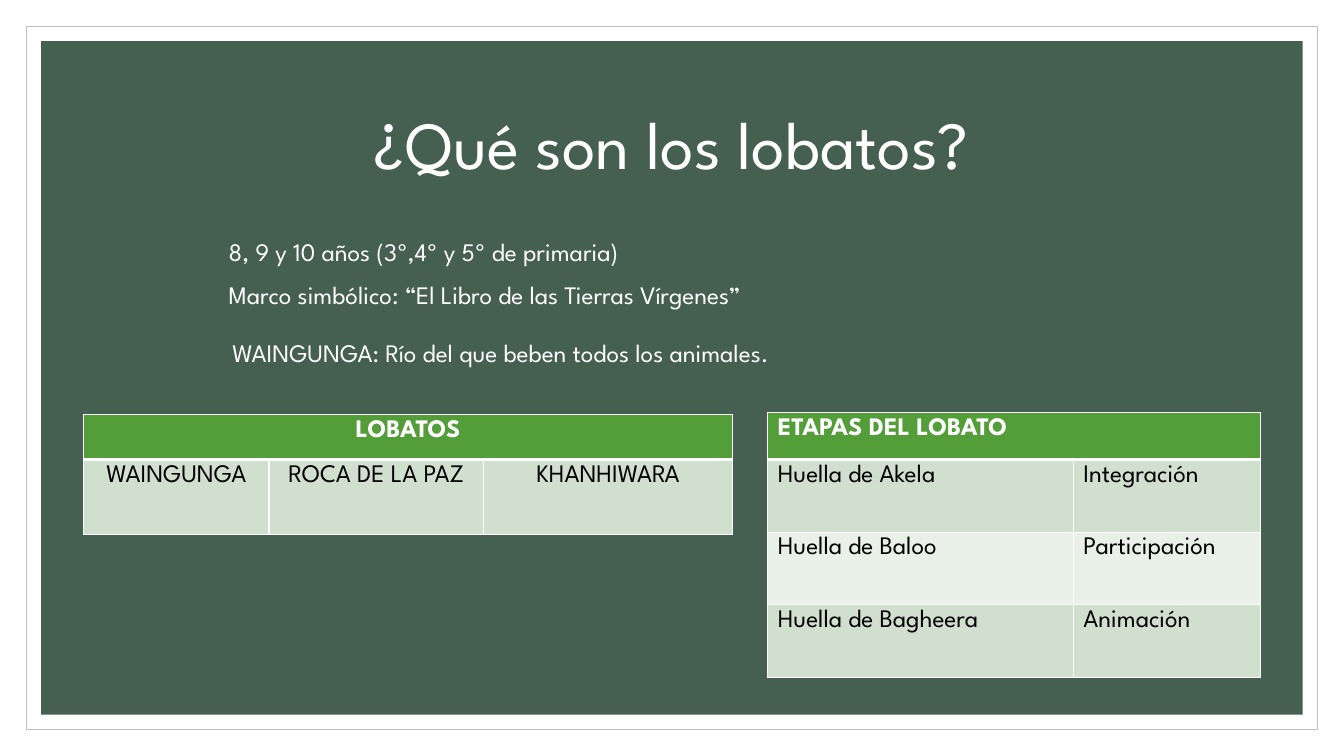
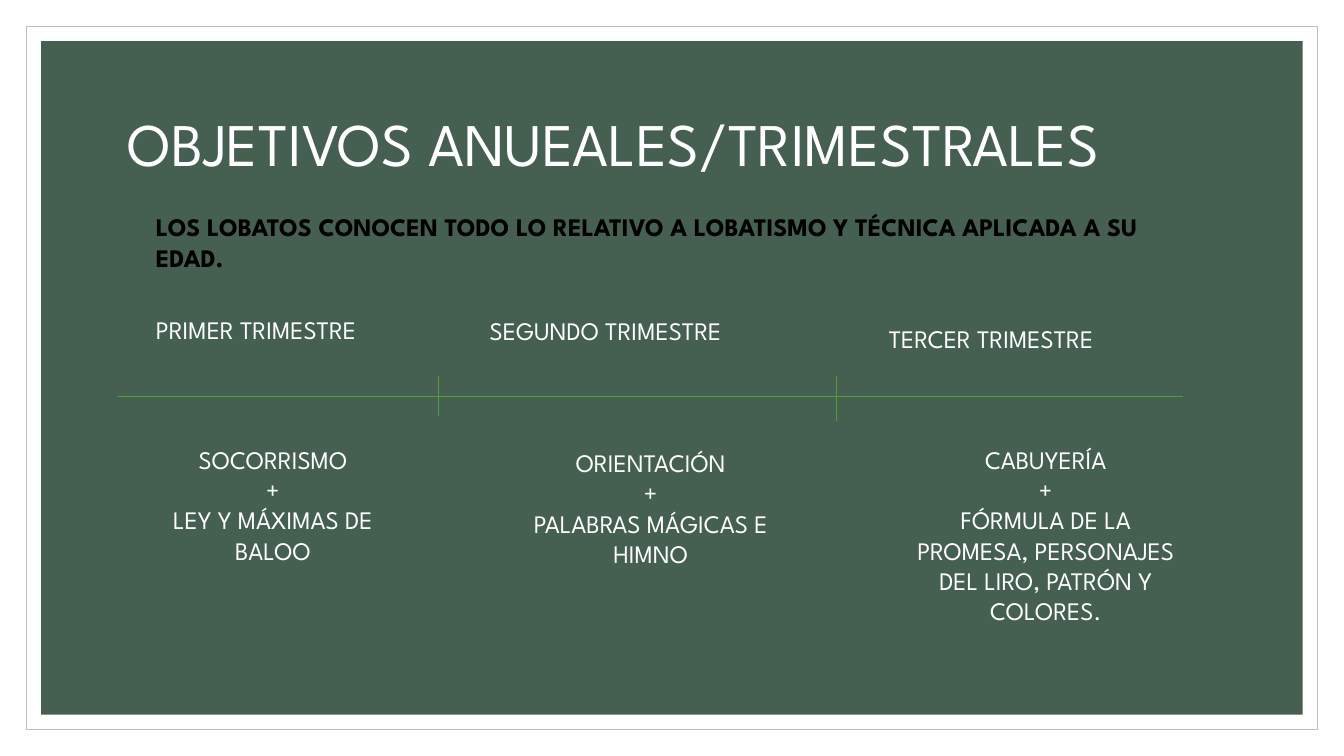
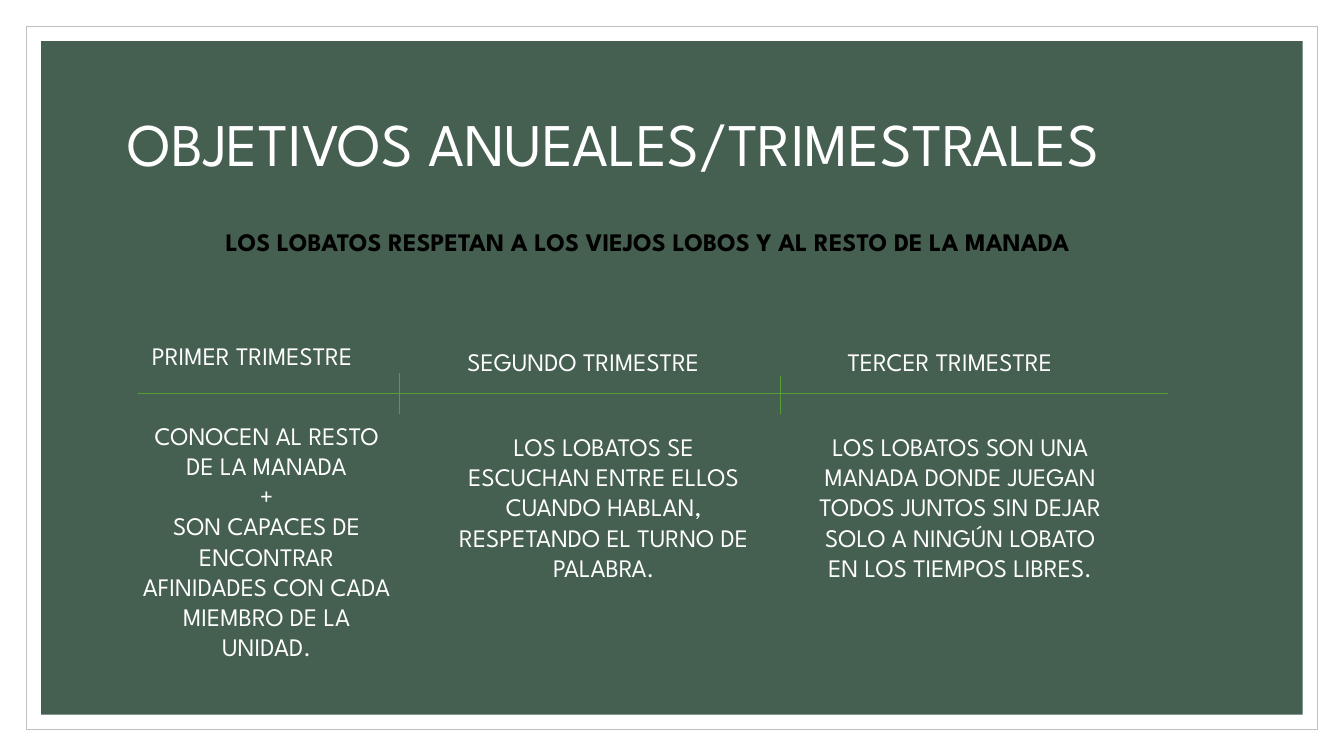
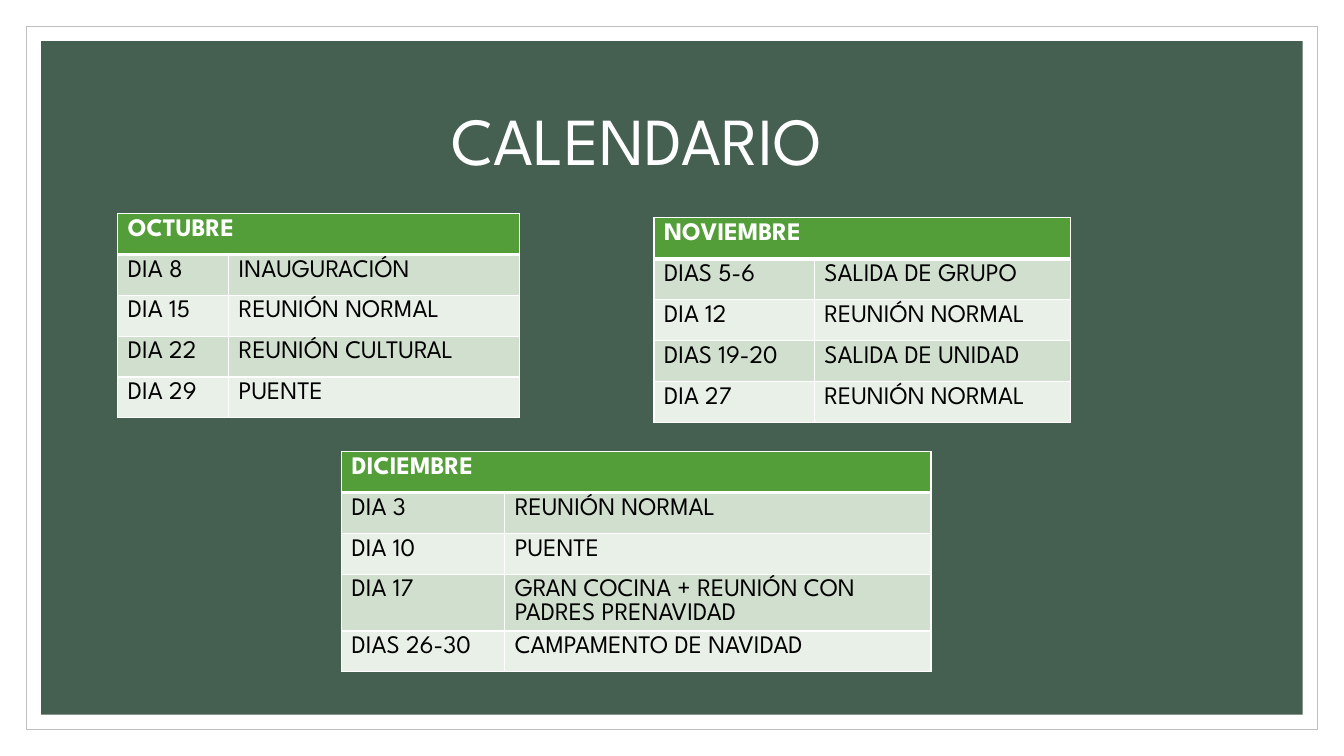
from lxml import etree
from pptx import Presentation
from pptx.dml.color import RGBColor
from pptx.enum.shapes import MSO_CONNECTOR, MSO_SHAPE
from pptx.enum.text import MSO_ANCHOR, PP_ALIGN
from pptx.oxml.ns import qn
from pptx.util import Cm, Pt

LEFT, CENTER = PP_ALIGN.LEFT, PP_ALIGN.CENTER
TOP, MIDDLE = MSO_ANCHOR.TOP, MSO_ANCHOR.MIDDLE
RECT, STRAIGHT = MSO_SHAPE.RECTANGLE, MSO_CONNECTOR.STRAIGHT

WHITE = RGBColor(0xFF, 0xFF, 0xFF)
BLACK = RGBColor(0, 0, 0)
GRAY = RGBColor(0xBF, 0xBF, 0xBF)
FOREST = RGBColor(0x45, 0x5F, 0x51)
GREEN = RGBColor(0x54, 0x9E, 0x39)
BANDS = [RGBColor(0xD1, 0xDF, 0xCE), RGBColor(0xE9, 0xF0, 0xE8)]
FONT = "League Spartan"
WIDE, HIGH = 33.87, 19.05
SIZE = 18
# Line heights as a share of the text size
BODY_LINE, TITLE_LINE, CELL_LINE = 1.2, 1.08, 0.92

# Content; all lengths in centimetres
FACTS = ["8, 9 y 10 años (3º,4º y 5º de primaria)",
         "Marco simbólico: “El Libro de las Tierras Vírgenes”"]
RIVER = ["WAINGUNGA: Río del que beben todos los animales."]

PACK = dict(at=(2.11, 10.44), cols=[4.67, 5.41, 6.27], rows=[1.14, 1.88],
            head="LOBATOS", align=CENTER,
            body=[("WAINGUNGA", "ROCA DE LA PAZ", "KHANHIWARA")])
STAGES = dict(at=(19.35, 10.39), cols=[7.7, 4.72], rows=[1.19] + [1.83] * 3,
              head="ETAPAS DEL LOBATO",
              body=[("Huella de Akela", "Integración"),
                    ("Huella de Baloo", "Participación"),
                    ("Huella de Bagheera", "Animación")])

GOALS = "OBJETIVOS ANUEALES/TRIMESTRALES"
TERMS = ["PRIMER TRIMESTRE", "SEGUNDO TRIMESTRE", "TERCER TRIMESTRE"]
# heads and goals: left, top, width; ticks: x, top, bottom
SKILLS = dict(
    aim="LOS LOBATOS CONOCEN TODO LO RELATIVO A LOBATISMO Y TÉCNICA "
        "APLICADA A SU EDAD.",
    aim_at=(3.68, 5.21, 26.14), axis=(2.97, 29.82, 9.98),
    ticks=[(11.05, 9.47, 10.49), (21.08, 9.47, 10.62)],
    heads=[(3.68, 7.8, 6.4), (12.09, 7.82, 8.61), (22.15, 8.03, 8.76)],
    goals=[((3.68, 11.07, 6.4),
            ["SOCORRISMO", "+", "LEY Y MÁXIMAS DE BALOO"]),
           ((12.83, 11.15, 7.14),
            ["ORIENTACIÓN", "+", "PALABRAS MÁGICAS E HIMNO"]),
           ((22.86, 11.07, 6.99),
            ["CABUYERÍA", "+", "FÓRMULA DE LA PROMESA, PERSONAJES DEL LIRO, "
             "PATRÓN Y COLORES."])])
RESPECT = dict(
    aim="LOS LOBATOS RESPETAN A LOS VIEJOS LOBOS Y AL RESTO DE LA MANADA",
    aim_at=(5.44, 5.59, 28.42), axis=(3.48, 29.44, 9.91),
    ticks=[(10.06, 9.4, 10.44), (19.66, 9.47, 10.44)],
    heads=[(3.58, 8.46, 6.27), (11.53, 8.59, 8.13), (21.11, 8.59, 9.27)],
    goals=[((3.28, 10.46, 6.88),
            ["CONOCEN AL RESTO DE LA MANADA", "+", "SON CAPACES DE ENCONTRAR "
             "AFINIDADES CON CADA MIEMBRO DE LA UNIDAD."]),
           ((11.15, 10.74, 8.13),
            ["LOS LOBATOS SE ESCUCHAN ENTRE ELLOS CUANDO HABLAN, "
             "RESPETANDO EL TURNO DE PALABRA."]),
           ((20.35, 10.74, 7.7),
            ["LOS LOBATOS SON UNA MANADA DONDE JUEGAN TODOS JUNTOS SIN DEJAR "
             "SOLO A NINGÚN LOBATO EN LOS TIEMPOS LIBRES."])])

ROW, TALL = 1.03, 1.43
MONTHS = [
    dict(at=(2.97, 5.38), cols=[2.79, 7.34], rows=[ROW] * 5, head="OCTUBRE",
         body=[("DIA 8", "INAUGURACIÓN"), ("DIA 15", "REUNIÓN NORMAL"),
               ("DIA 22", "REUNIÓN CULTURAL"), ("DIA 29", "PUENTE")]),
    dict(at=(16.48, 5.49), cols=[4.04, 6.45], rows=[ROW] * 5,
         head="NOVIEMBRE",
         body=[("DIAS 5-6", "SALIDA DE GRUPO"), ("DIA 12", "REUNIÓN NORMAL"),
               ("DIAS 19-20", "SALIDA DE UNIDAD"),
               ("DIA 27", "REUNIÓN NORMAL")]),
    dict(at=(8.61, 11.38), cols=[4.11, 10.74], rows=[ROW] * 3 + [TALL, ROW],
         head="DICIEMBRE",
         body=[("DIA 3", "REUNIÓN NORMAL"), ("DIA 10", "PUENTE"),
               ("DIA 17", "GRAN COCINA + REUNIÓN CON PADRES PRENAVIDAD"),
               ("DIAS 26-30", "CAMPAMENTO DE NAVIDAD")]),
]


def write(frame, lines, color=WHITE, size=SIZE, bold=False, align=LEFT,
          line=BODY_LINE, gap=0):
    frame.text = "\n".join(lines)
    for num, para in enumerate(frame.paragraphs):
        para.alignment = align
        para.line_spacing = Pt(round(size * line, 1))
        para.space_before = Pt(gap if num else 0)
        for run in para.runs:
            font = run.font
            font.name, font.size, font.bold = FONT, Pt(size), bold
            font.color.rgb = color


def add_text(slide, at, lines, **style):
    left, top, width = at
    box = slide.shapes.add_textbox(Cm(left), Cm(top), Cm(width), Cm(1.02))
    box.text_frame.word_wrap = True
    write(box.text_frame, lines, **style)


def add_line(slide, x1, y1, x2, y2):
    line = slide.shapes.add_connector(STRAIGHT, Cm(x1), Cm(y1), Cm(x2), Cm(y2))
    line.line.color.rgb = GREEN
    line.line.width = Pt(0.5)
    etree.SubElement(line.element.spPr, qn("a:effectLst"))


def set_edges(cell, top, bottom):
    props = cell._tc.get_or_add_tcPr()
    for side, width in (("L", 1), ("R", 1), ("T", top), ("B", bottom)):
        edge = etree.SubElement(props, qn("a:ln" + side), w=str(Pt(width)))
        fill = etree.SubElement(edge, qn("a:solidFill"))
        etree.SubElement(fill, qn("a:srgbClr"), val=str(WHITE))


def add_grid(slide, at, cols, rows, head, body, align=LEFT):
    shape = slide.shapes.add_table(len(rows), len(cols), Cm(at[0]), Cm(at[1]),
                                   Cm(sum(cols)), Cm(sum(rows)))
    table = shape.table
    for col, width in zip(table.columns, cols):
        col.width = Cm(width)
    for row, height in zip(table.rows, rows):
        row.height = Cm(height)
    table.cell(0, 0).merge(table.cell(0, len(cols) - 1))
    filled = [[head] + [""] * (len(cols) - 1)] + body
    for r, texts in enumerate(filled):
        for c, text in enumerate(texts):
            cell = table.cell(r, c)
            # A thick rule parts the header from the body
            set_edges(cell, 3 if r == 1 else 1, 3 if r == 0 else 1)
            cell.fill.solid()
            cell.fill.fore_color.rgb = BANDS[(r - 1) % 2] if r else GREEN
            cell.vertical_anchor = TOP
            if text:
                write(cell.text_frame, [text], color=BLACK if r else WHITE,
                      bold=r == 0, align=align, line=CELL_LINE)


def add_frame(slide, layout):
    """Put the white border and green panel on the shared layout."""
    for num, (inset, fill) in enumerate([(0.66, WHITE), (1.04, FOREST)]):
        panel = slide.shapes.add_shape(RECT, Cm(inset), Cm(inset),
                                       Cm(WIDE - 2 * inset),
                                       Cm(HIGH - 2 * inset))
        panel.shadow.inherit = False
        panel.fill.solid()
        panel.fill.fore_color.rgb = fill
        if fill == WHITE:
            panel.line.color.rgb = GRAY
            panel.line.width = Pt(0.5)
        else:
            panel.line.fill.background()
        layout.shapes.element.insert(2 + num, panel.element)


def add_slide(deck, layout, text, size=48, align=CENTER, at=(2.97, 1.78)):
    slide = deck.slides.add_slide(layout)
    title = slide.shapes.title
    title.left, title.top = Cm(at[0]), Cm(at[1])
    title.width, title.height = Cm(27.94), Cm(3.81)
    title.text_frame.vertical_anchor = MIDDLE
    write(title.text_frame, [text], size=size, align=align, line=TITLE_LINE)
    return slide


def add_plan(deck, layout, plan):
    slide = add_slide(deck, layout, GOALS, size=43.2, align=LEFT)
    start, end, y = plan["axis"]
    add_line(slide, start, y, end, y)
    for x, top, bottom in plan["ticks"]:
        add_line(slide, x, top, x, bottom)
    for at, term in zip(plan["heads"], TERMS):
        add_text(slide, at, [term])
    for at, lines in plan["goals"]:
        add_text(slide, at, lines, align=CENTER)
    add_text(slide, plan["aim_at"], [plan["aim"]], color=BLACK, bold=True)


def main():
    deck = Presentation()
    deck.slide_width, deck.slide_height = Cm(WIDE), Cm(HIGH)
    layout = deck.slide_layouts[5]

    # Who they are
    slide = add_slide(deck, layout, "¿Qué son los lobatos?")
    add_frame(slide, layout)
    add_text(slide, (5.51, 5.84, 22), FACTS, gap=9)
    add_text(slide, (5.61, 8.38, 22.12), RIVER)
    for grid in (PACK, STAGES):
        add_grid(slide, **grid)

    # Goals by term
    for plan in (SKILLS, RESPECT):
        add_plan(deck, layout, plan)

    # Calendar
    slide = add_slide(deck, layout, "CALENDARIO", at=(2.08, 1.68))
    for grid in MONTHS:
        add_grid(slide, **grid)

    deck.save("out.pptx")


if __name__ == "__main__":
    main()
